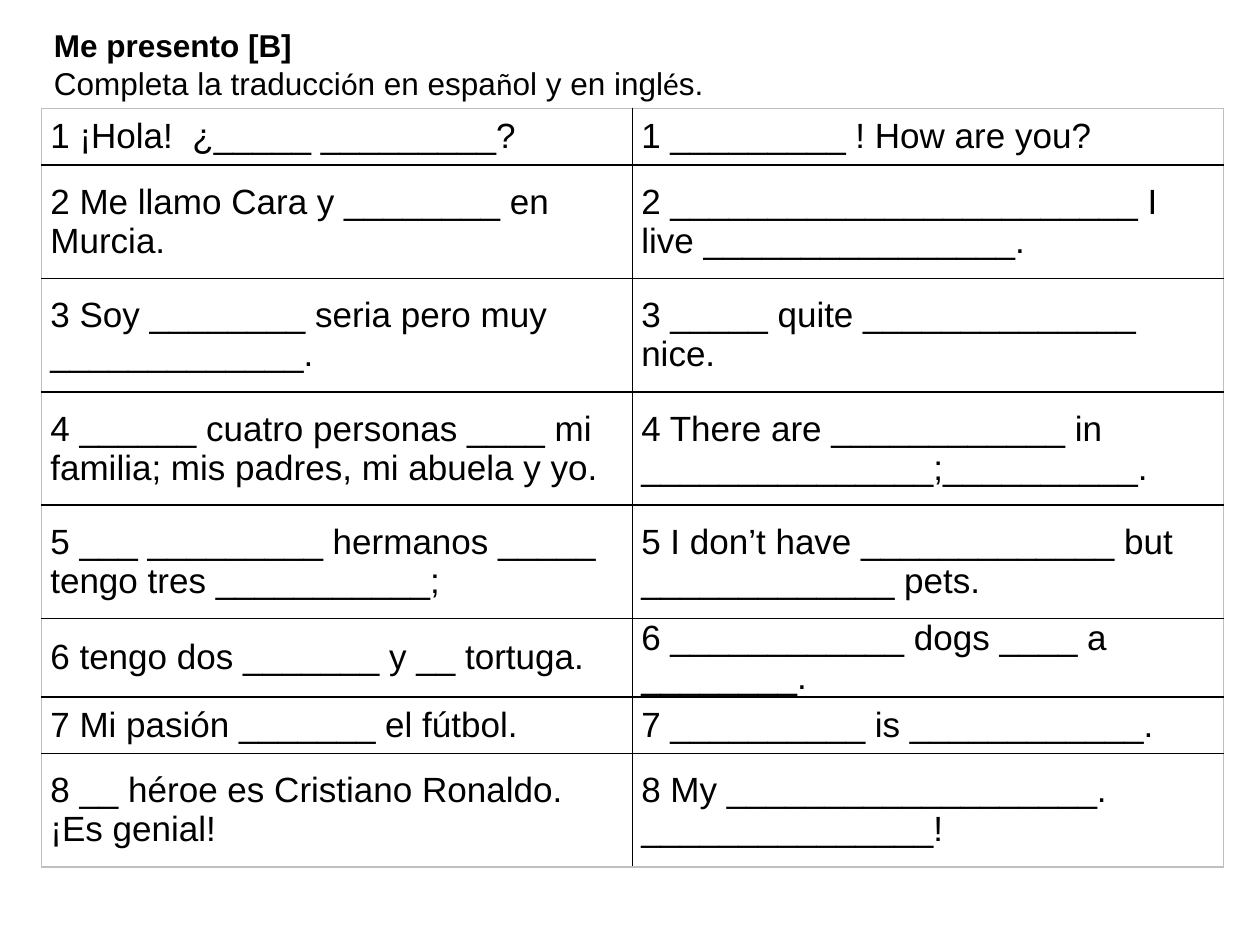
from lxml.etree import SubElement
from pptx import Presentation
from pptx.dml.color import RGBColor
from pptx.enum.text import MSO_ANCHOR, MSO_AUTO_SIZE
from pptx.oxml.ns import qn
from pptx.util import Inches, Pt

COLOURS = {"ink": "000000", "paper": "FFFFFF", "frame": "BFBFBF"}
LINE_HEIGHT = 0.45
COLUMN_WIDTH = 4.69

HEADING = [
    [("Me presento [B]", "Arial", True)],
    [
        ("Completa la traducci", "Arial", False),
        ("ó", "Calibri", False),
        ("n en espa", "Arial", False),
        ("ñ", "Calibri", False),
        ("ol y en ingl", "Arial", False),
        ("é", "Calibri", False),
        ("s.", "Arial", False),
    ],
]

SENTENCES = [
    (1, "1 ¡Hola!  ¿_____ _________?", "1 _________ ! How are you?"),
    (2, "2 Me llamo Cara y ________ en Murcia.",
     "2 ________________________ I live ________________."),
    (2, "3 Soy ________ seria pero muy _____________.",
     "3 _____ quite ______________ nice."),
    (2, "4 ______ cuatro personas ____ mi familia; mis padres, mi abuela y yo.",
     "4 There are ____________ in _______________;__________."),
    (2, "5 ___ _________ hermanos _____ tengo tres ___________;",
     "5 I don’t have _____________ but _____________ pets."),
    (1, "6 tengo dos _______ y __ tortuga.", "6 ____________ dogs ____ a ________."),
    (1, "7 Mi pasión _______ el fútbol.", "7 __________ is ____________."),
    (2, "8 __ héroe es Cristiano Ronaldo.  ¡Es genial!",
     "8 My ___________________. _______________!"),
]


def add_span(para, text, size, font="Arial", bold=False):
    span = para.add_run()
    span.text = text
    span.font.name = font
    span.font.size = Pt(size)
    span.font.bold = bold
    span.font.color.rgb = RGBColor.from_string(COLOURS["ink"])


def add_heading(page):
    box = page.shapes.add_textbox(Inches(0.33), Inches(0.15), Inches(5.41), Inches(0.71))
    frame = box.text_frame
    frame.word_wrap = False
    frame.auto_size = MSO_AUTO_SIZE.SHAPE_TO_FIT_TEXT
    frame.vertical_anchor = MSO_ANCHOR.MIDDLE
    for index, spans in enumerate(HEADING):
        para = frame.paragraphs[0] if index == 0 else frame.add_paragraph()
        for text, font, bold in spans:
            add_span(para, text, 18, font, bold)


def set_borders(cell, outer_sides):
    properties = cell._tc.get_or_add_tcPr()
    for position, side in enumerate(("L", "R", "T", "B")):
        line = properties.makeelement(qn(f"a:ln{side}"), {"w": str(Pt(1))})
        fill = SubElement(line, qn("a:solidFill"))
        colour = COLOURS["frame" if side in outer_sides else "ink"]
        SubElement(fill, qn("a:srgbClr"), val=colour)
        properties.insert(position, line)


def fill_cell(cell, text, outer_sides):
    cell.margin_left = cell.margin_right = Inches(0.07)
    cell.margin_top = cell.margin_bottom = 0
    cell.vertical_anchor = MSO_ANCHOR.MIDDLE
    cell.fill.solid()
    cell.fill.fore_color.rgb = RGBColor.from_string(COLOURS["paper"])
    add_span(cell.text_frame.paragraphs[0], text, 20)
    set_borders(cell, outer_sides)


def add_sentence_table(page):
    height = LINE_HEIGHT * sum(lines for lines, *_ in SENTENCES)
    table = page.shapes.add_table(
        len(SENTENCES), 2, Inches(0.33), Inches(0.86),
        Inches(2 * COLUMN_WIDTH), Inches(height),
    ).table
    table.first_row = False
    table.horz_banding = False
    for column in table.columns:
        column.width = Inches(COLUMN_WIDTH)
    last_row = len(SENTENCES) - 1
    for row, (lines, *texts) in enumerate(SENTENCES):
        table.rows[row].height = Inches(LINE_HEIGHT * lines)
        vertical_side = {0: "T", last_row: "B"}.get(row, "")
        for column, text in enumerate(texts):
            fill_cell(table.cell(row, column), text, "LR"[column] + vertical_side)


def main():
    deck = Presentation()
    deck.slide_width = Inches(10)
    deck.slide_height = Inches(7.5)
    page = deck.slides.add_slide(deck.slide_layouts[6])
    add_sentence_table(page)
    add_heading(page)
    deck.save("out.pptx")


if __name__ == "__main__":
    main()
